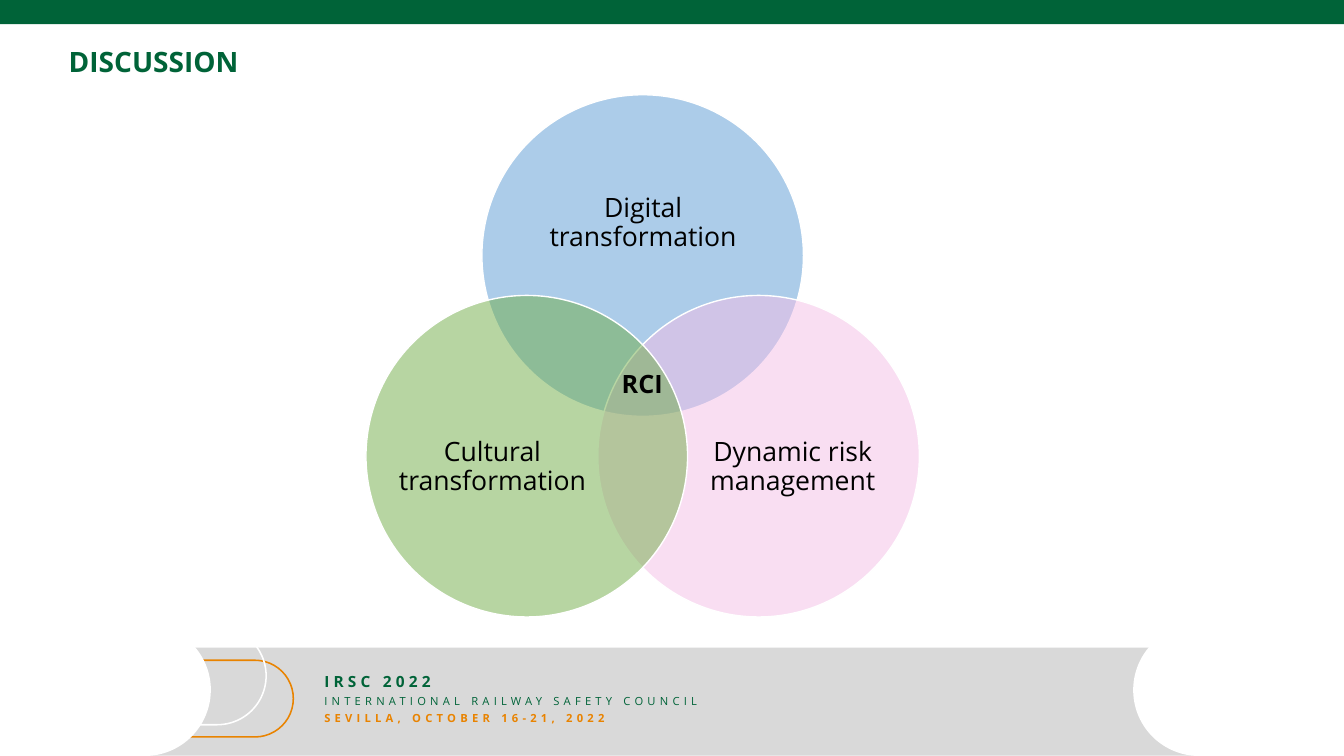
from lxml import etree
from pptx import Presentation
from pptx.dml.color import RGBColor
from pptx.enum.shapes import MSO_SHAPE
from pptx.enum.text import MSO_ANCHOR, MSO_AUTO_SIZE, PP_ALIGN
from pptx.oxml.ns import qn
from pptx.util import Pt

RECTANGLE = MSO_SHAPE.RECTANGLE
ELLIPSE = MSO_SHAPE.OVAL
PILL = MSO_SHAPE.ROUND_2_SAME_RECTANGLE
LEFT, CENTER = PP_ALIGN.LEFT, PP_ALIGN.CENTER
MIDDLE, TOP = MSO_ANCHOR.MIDDLE, MSO_ANCHOR.TOP
NO_AUTOFIT = MSO_AUTO_SIZE.NONE
FONT = "Open Sans"
COLORS = {
    "green": "006338", "orange": "E98300", "gray": "D9D9D9", "white": "FFFFFF",
    "black": "000000", "blue": "5B9BD5", "pink": "F4BEE7", "leaf": "70AD47",
}

deck = Presentation()
deck.slide_width, deck.slide_height = Pt(960), Pt(540)
slide = deck.slides.add_slide(deck.slide_layouts[5])


def add_figure(kind, box, fill=None, line=None, line_width=1.1):
    figure = slide.shapes.add_shape(kind, *[Pt(value) for value in box])
    figure.shadow.inherit = False
    if fill:
        figure.fill.solid()
        figure.fill.fore_color.rgb = RGBColor.from_string(COLORS[fill])
    else:
        figure.fill.background()
    if line:
        figure.line.color.rgb = RGBColor.from_string(COLORS[line])
        figure.line.width = Pt(line_width)
    else:
        figure.line.fill.background()
    return figure


def write(holder, box, words, size, color, bold=False, align=LEFT, anchor=TOP,
          insets=(7.2, 3.6), line_spacing=1.0, wrap=True):
    holder.left, holder.top, holder.width, holder.height = [Pt(value) for value in box]
    frame = holder.text_frame
    frame.text = words
    frame.word_wrap = wrap
    frame.auto_size = NO_AUTOFIT
    frame.vertical_anchor = anchor
    frame.margin_left = frame.margin_right = Pt(insets[0])
    frame.margin_top = frame.margin_bottom = Pt(insets[1])
    paragraph = frame.paragraphs[0]
    paragraph.alignment = align
    paragraph.line_spacing = line_spacing
    run = paragraph.runs[0]
    run.font.name = FONT
    run.font.size = Pt(size)
    run.font.bold = bold
    run.font.color.rgb = RGBColor.from_string(COLORS[color])
    return run


add_figure(RECTANGLE, (0, 0, 960, 17.2), "green")

footer_pills = [
    (7.9, 462.7, 905, 77, 90, "gray", None),
    (809.4, 445.7, 150.6, 94.3, 270, "white", None),
    (7.9, 471.6, 201.6, 54.8, 90, None, "orange"),
    (7.9, 447.8, 182.2, 69.9, 90, None, "white"),
    (0, 445.7, 150.6, 94.3, 90, "white", None),
]
for left, top, width, height, rotation, fill, line in footer_pills:
    shift = (width - height) / 2
    pill = add_figure(PILL, (left + shift, top - shift, height, width), fill, line)
    pill.adjustments[0], pill.adjustments[1] = 0.5, 0
    pill.rotation = rotation

footer_lines = [
    ("IRSC 2022", 476.6, 271.4, 20.9, 11, "green", True),
    ("INTERNATIONAL RAILWAY SAFETY COUNCIL", 492.5, 318.2, 17.3, 8, "green", False),
    ("SEVILLA, OCTOBER 16-21, 2022", 504.7, 271.4, 17.3, 8, "orange", True),
]
for words, top, width, height, size, color, bold in footer_lines:
    box = (224.6, top, width, height)
    run = write(slide.shapes.add_textbox(0, 0, 0, 0), box, words, size, color, bold)
    run.font._element.set("spc", "300")

write(slide.shapes.title, (26.6, 27.4, 907.2, 36), "DISCUSSION", 20, "green", True,
      anchor=MIDDLE, insets=(22.5, 0), line_spacing=0.9)

DIAMETER = 229.7
venn_circles = [
    ("Digital transformation", 344.2, 67.7, "blue", (375.1, 108, 168.5, 103.7)),
    ("Dynamic risk management", 427, 211, "pink", (497.5, 270.7, 137.5, 126)),
    ("Cultural transformation", 261.4, 211, "leaf", (283, 270.7, 137.5, 126)),
]
for words, left, top, color, label_box in venn_circles:
    circle = add_figure(ELLIPSE, (left, top, DIAMETER, DIAMETER), color, "white", 1)
    tint = circle._element.spPr.find(qn("a:solidFill"))[0]
    etree.SubElement(tint, qn("a:alpha"), val="50000")
    write(slide.shapes.add_textbox(0, 0, 0, 0), label_box, words, 19, "black",
          align=CENTER, anchor=MIDDLE, insets=(0, 0), line_spacing=0.9)

write(slide.shapes.add_textbox(0, 0, 0, 0), (437, 259.9, 44.6, 28.8), "RCI", 18, "black", True,
      wrap=False)

deck.save("out.pptx")
